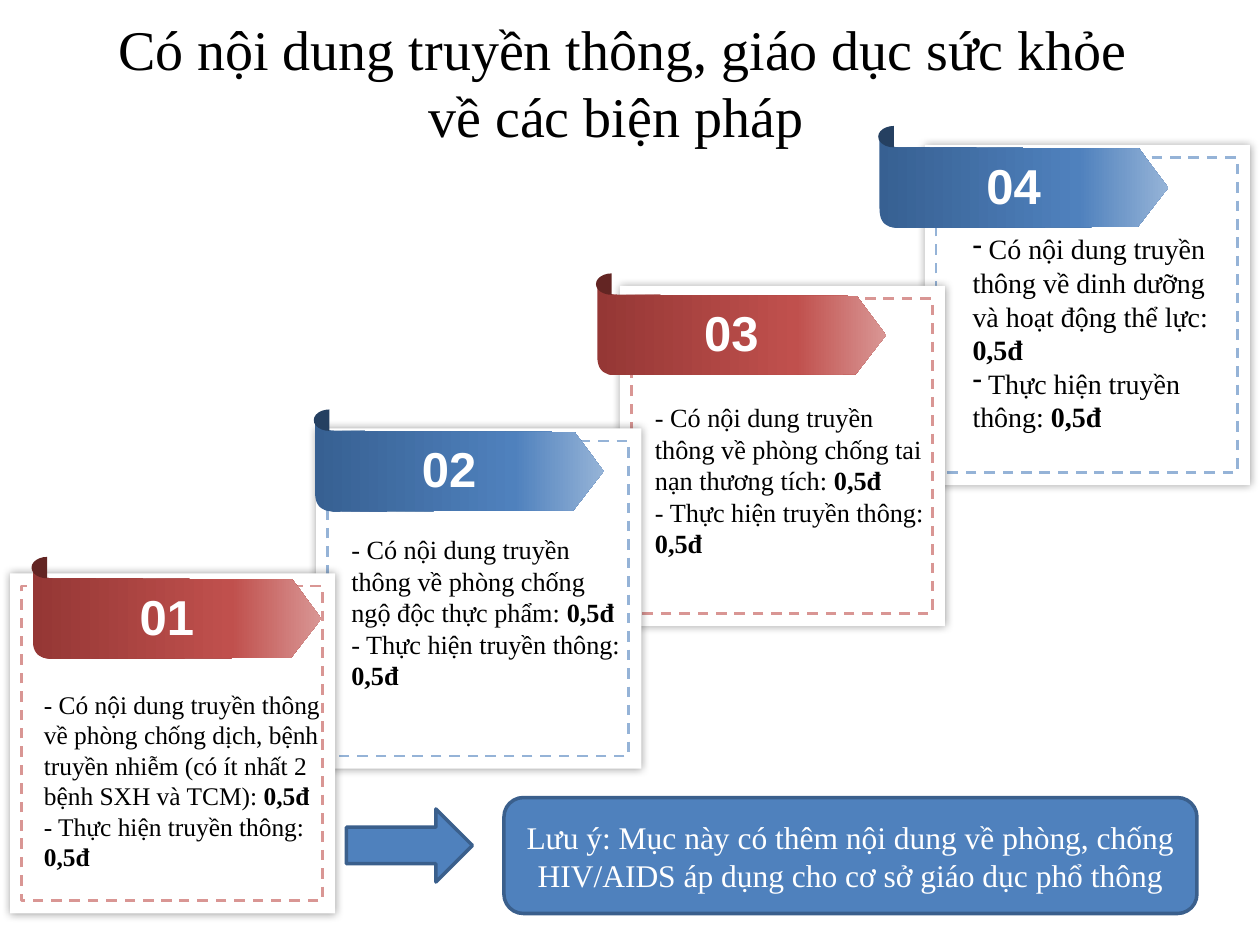
from copy import deepcopy

from pptx import Presentation
from pptx.dml.color import RGBColor
from pptx.enum.dml import MSO_LINE
from pptx.enum.shapes import MSO_SHAPE
from pptx.enum.text import MSO_ANCHOR, PP_ALIGN
from pptx.oxml.ns import qn
from pptx.util import Inches, Pt
from lxml.etree import SubElement

TITLE = "Có nội dung truyền thông, giáo dục sức khỏe\vvề các biện pháp "
NOTE = ("Lưu ý: Mục này có thêm nội dung về phòng, chống HIV/AIDS "
        "áp dụng cho cơ sở giáo dục phổ thông")
SCORE = "0,5đ"
PRACTICE = "Thực hiện truyền thông: "
SERIF = "Times New Roman"
BLUE = {"stops": [(0, "376092"), (0.69, "4F81BD"), (1, "95B3D7")], "curl": "254061"}
RED = {"stops": [(0, "953735"), (0.69, "C0504D"), (1, "D99694")], "curl": "632523"}

CARDS = [
    {"number": "04", "colors": BLUE, "card": (7.34, 1.15), "ribbon": (6.98, 1.06),
     "text_box": (7.62, 1.78, 2.22, 1.72), "size": 16, "bullet": True,
     "topic": "Có nội dung truyền thông về dinh dưỡng và hoạt động thể lực: "},
    {"number": "03", "colors": RED, "card": (4.92, 2.27), "ribbon": (4.74, 2.23),
     "text_box": (5.1, 3.13, 2.4, 1.36), "size": 15, "bullet": False,
     "topic": "Có nội dung truyền thông về phòng chống tai nạn thương tích: "},
    {"number": "02", "colors": BLUE, "card": (2.51, 3.4), "ribbon": (2.5, 3.31),
     "text_box": (2.69, 4.18, 2.4, 1.36), "size": 15, "bullet": False,
     "topic": "Có nội dung truyền thông về phòng chống ngộ độc thực phẩm: "},
    {"number": "01", "colors": RED, "card": (0.08, 4.55), "ribbon": (0.26, 4.48),
     "text_box": (0.25, 5.41, 2.5, 1.57), "size": 14.5, "bullet": False,
     "topic": "Có nội dung truyền thông về phòng chống dịch, bệnh truyền nhiễm "
              "(có ít nhất 2 bệnh SXH và TCM): "},
]
RIBBON_EDGE = [(0.14, 0.75), (2.05, 0.74), (2.29, 0.43), (2.06, 0.12), (0.22, 0.11)]
RIBBON_CURVES = [
    [(0.22, 0.11), (0.14, 0.11), (0.02, 0.12), (0, 0)],
    [(0, 0.59), (0, 0.72), (0.06, 0.74), (0.14, 0.75)],
]


def color(value):
    """Turn a hex string into a colour."""
    return RGBColor.from_string(value)


def curve_points(controls, steps=12):
    """List points along a cubic curve."""
    points = []
    for step in range(steps + 1):
        t = step / steps
        weights = ((1 - t) ** 3, 3 * t * (1 - t) ** 2, 3 * t * t * (1 - t), t ** 3)
        points.append(tuple(sum(w * point[axis] for w, point in zip(weights, controls))
                            for axis in (0, 1)))
    return points


def add_box(slide, kind, box, fill=None, line=None, width=2):
    """Add a flat preset shape."""
    shape = slide.shapes.add_shape(kind, *map(Inches, box))
    shape.shadow.inherit = False
    if fill:
        shape.fill.solid()
        shape.fill.fore_color.rgb = color(fill)
    else:
        shape.fill.background()
    if line:
        shape.line.color.rgb = color(line)
        shape.line.width = Pt(width)
    else:
        shape.line.fill.background()
    return shape


def add_soft_shadow(shape):
    """Give a shape a blurred black shadow on all sides."""
    effects = shape._element.spPr.find(qn("a:effectLst"))
    shadow = SubElement(effects, qn("a:outerShdw"), blurRad=str(Pt(5)), dist="0",
                        dir="0", algn="ctr", rotWithShape="0")
    black = SubElement(shadow, qn("a:srgbClr"), val="000000")
    SubElement(black, qn("a:alpha"), val="40000")


def write_text(shape, paragraphs, size, font=SERIF, ink="000000", align=PP_ALIGN.LEFT,
               wrap=True, bullet=False):
    """Fill a shape with paragraphs of (text, bold) runs."""
    frame = shape.text_frame
    frame.word_wrap = wrap
    frame.vertical_anchor = MSO_ANCHOR.MIDDLE
    for index, runs in enumerate(paragraphs):
        paragraph = frame.add_paragraph() if index else frame.paragraphs[0]
        paragraph.alignment = align
        if bullet:
            properties = paragraph._p.get_or_add_pPr()
            properties.set("marL", "0")
            properties.set("indent", "0")
            SubElement(properties, qn("a:buFontTx"))
            SubElement(properties, qn("a:buChar"), char="-")
        for text, bold in runs:
            for part_index, part in enumerate(text.split("\v")):
                if part_index:
                    paragraph.add_line_break()
                run = paragraph.add_run()
                run.text = part
                for name, value in {"size": Pt(size), "name": font, "bold": bold}.items():
                    setattr(run.font, name, value)
                run.font.color.rgb = color(ink)


def add_ribbon(slide, left, top, colors):
    """Draw a gradient arrow ribbon with its dark curl."""
    curl_in, curl_out = map(curve_points, RIBBON_CURVES)
    points = [(Inches(left + x), Inches(top + y))
              for x, y in RIBBON_EDGE + curl_in[1:] + curl_out]
    builder = slide.shapes.build_freeform(*points[0])
    builder.add_line_segments(points[1:], close=True)
    ribbon = builder.convert_to_shape()
    ribbon.shadow.inherit = False
    ribbon.line.fill.background()
    ribbon.fill.gradient()
    ribbon.fill.gradient_angle = 0
    stop_list = ribbon._element.spPr.find(".//" + qn("a:gsLst"))
    stop_list.append(deepcopy(stop_list[0]))
    for stop, (position, value) in zip(ribbon.fill.gradient_stops, colors["stops"]):
        stop.position = position
        stop.color.rgb = color(value)
    curl = add_box(slide, MSO_SHAPE.PIE, (left - 0.01, top - 0.06, 0.25, 0.17),
                   colors["curl"])
    curl.adjustments[0], curl.adjustments[1] = 54, 162


def add_card(slide, card):
    """Draw one numbered card with its ribbon and text."""
    left, top = card["card"]
    add_soft_shadow(add_box(slide, MSO_SHAPE.RECTANGLE, (left, top, 2.58, 2.7), "FFFFFF"))
    border = add_box(slide, MSO_SHAPE.RECTANGLE, (left + 0.09, top + 0.1, 2.39, 2.5),
                     line=card["colors"]["stops"][-1][1], width=1.5)
    border.line.dash_style = MSO_LINE.DASH
    left, top = card["ribbon"]
    add_ribbon(slide, left, top, card["colors"])
    number = slide.shapes.add_textbox(*map(Inches, (left + 0.75, top + 0.12, 0.64, 0.57)))
    write_text(number, [[(card["number"], True)]], 28, "Arial", "FFFFFF", wrap=False)
    lead = " " if card["bullet"] else "- "
    lines = [[(lead + text, False), (SCORE, True)] for text in (card["topic"], PRACTICE)]
    body = slide.shapes.add_textbox(*map(Inches, card["text_box"]))
    write_text(body, lines, card["size"], bullet=card["bullet"])


def main():
    """Build and save the slide."""
    presentation = Presentation()
    presentation.slide_width, presentation.slide_height = Inches(10), Inches(7.5)
    slide = presentation.slides.add_slide(presentation.slide_layouts[5])
    title = slide.shapes.title
    for name, value in zip(("left", "top", "width", "height"), (0.8, 0.06, 8.29, 1.18)):
        setattr(title, name, Inches(value))
    write_text(title, [[(TITLE, False)]], 32, align=PP_ALIGN.CENTER, wrap=False)
    for card in CARDS:
        add_card(slide, card)
    add_box(slide, MSO_SHAPE.RIGHT_ARROW, (2.75, 6.42, 1, 0.58), "4F81BD", "3A5F8C")
    note = add_box(slide, MSO_SHAPE.ROUNDED_RECTANGLE, (4, 6.33, 5.5, 0.92),
                   "4F81BD", "3A5F8C")
    write_text(note, [[(NOTE, False)]], 18, ink="FFFFFF", align=PP_ALIGN.CENTER)
    presentation.save("out.pptx")


if __name__ == "__main__":
    main()
